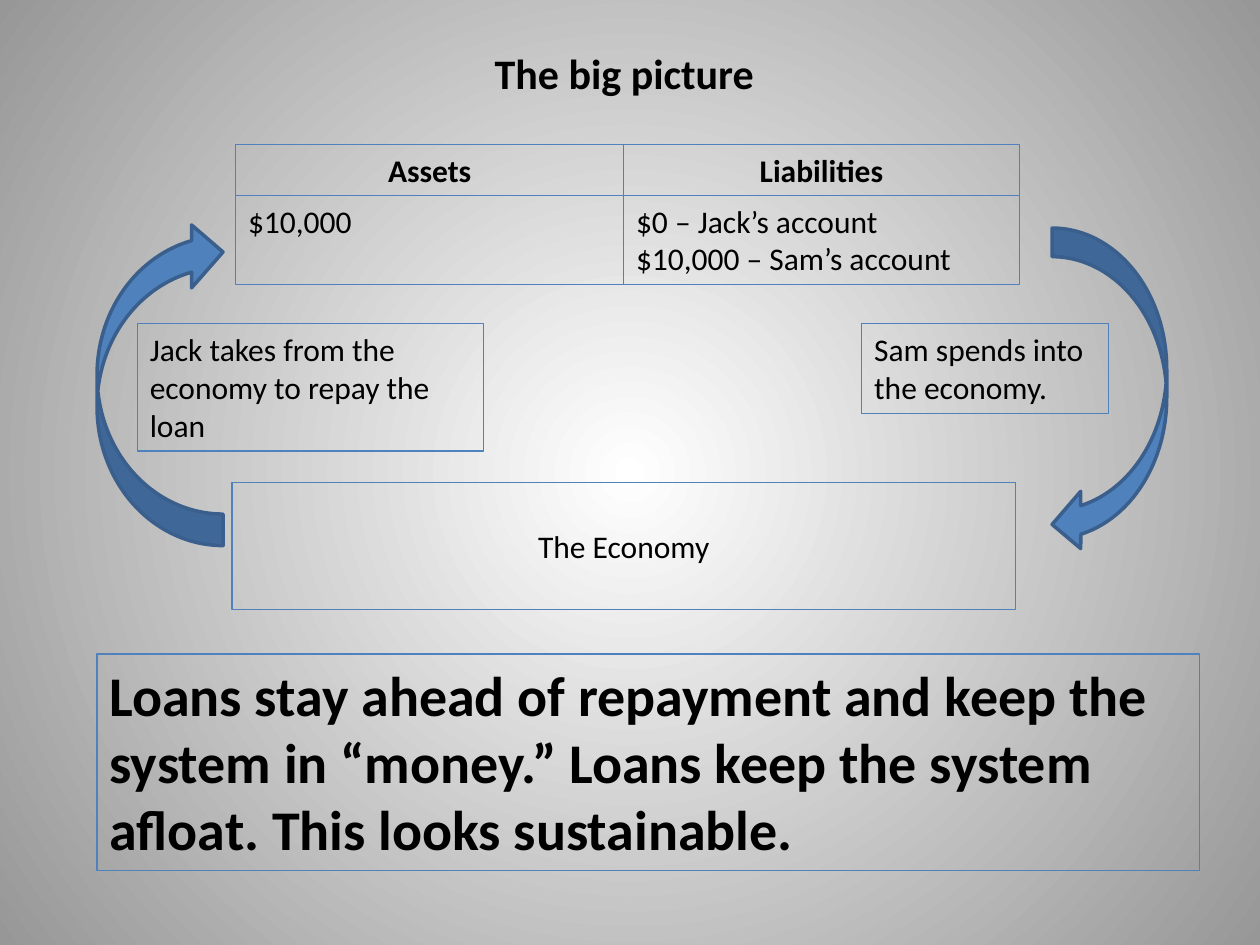
from lxml import etree
from pptx import Presentation
from pptx.dml.color import RGBColor
from pptx.enum.shapes import MSO_SHAPE
from pptx.enum.text import MSO_ANCHOR, PP_ALIGN
from pptx.oxml.ns import qn
from pptx.util import Inches, Pt

# Content
TITLE = "The big picture"
LEDGER = [
    ["Assets", "Liabilities"],
    ["$10,000", "$0 – Jack’s account\n$10,000 – Sam’s account"],
]
ECONOMY = "The Economy"
SPENDING = "Sam spends into the economy."
REPAYMENT = "Jack takes from the economy to repay the loan"
CONCLUSION = ("Loans stay ahead of repayment and keep the system in “money.” "
              "Loans keep the system afloat. This looks sustainable.")

# Layout in inches
LEDGER_LEFT, LEDGER_TOP = 1.87, 1.15
COLUMN_WIDTHS = [3.08, 3.14]
ROW_HEIGHTS = [0.4, 0.71]
MARGIN = 0.77
NOTE_TOP = 2.57
ARROW_HEIGHT = 2.58

BLUE, DARK_BLUE, BLACK = "4F81BD", "3A5F8C", "000000"
GRADIENT = ["FFFFFF", "979797"]


def color(value):
    return RGBColor.from_string(value)


def place(shape, left, top, width, height):
    shape.left, shape.top = Inches(left), Inches(top)
    shape.width, shape.height = Inches(width), Inches(height)


def write(shape, text, size=18, bold=False, align=PP_ALIGN.LEFT, anchor=MSO_ANCHOR.TOP):
    frame = shape.text_frame
    frame.word_wrap = True
    frame.vertical_anchor = anchor
    frame.text = text
    for paragraph in frame.paragraphs:
        paragraph.alignment = align
        font = paragraph.font
        font.name, font.size, font.bold = "Calibri", Pt(size), bold
        font.color.rgb = color(BLACK)


def add_box(slide, text, left, top, width, height, **text_format):
    box = slide.shapes.add_shape(MSO_SHAPE.RECTANGLE, 0, 0, 0, 0)
    place(box, left, top, width, height)
    box.shadow.inherit = False
    box.fill.background()
    box.line.color.rgb = color(BLUE)
    box.line.width = Pt(0.75)
    write(box, text, **text_format)


def add_flow(slide, left, top, width, rotation=0):
    arrow = slide.shapes.add_shape(MSO_SHAPE.CURVED_LEFT_ARROW, 0, 0, 0, 0)
    place(arrow, left, top, width, ARROW_HEIGHT)
    arrow.rotation = rotation
    arrow.shadow.inherit = False
    arrow.fill.solid()
    arrow.fill.fore_color.rgb = color(BLUE)
    arrow.line.color.rgb = color(DARK_BLUE)
    arrow.line.width = Pt(2)


def paint_background(slide):
    fill = slide.background.fill
    fill.gradient()
    for stop, shade in zip(fill.gradient_stops, GRADIENT):
        stop.color.rgb = color(shade)
    # Turn the linear gradient into a circle around the slide's centre
    gradient = slide.element.find(".//" + qn("a:gradFill"))
    gradient.remove(gradient.find(qn("a:lin")))
    circle = etree.SubElement(gradient, qn("a:path"), {"path": "circle"})
    etree.SubElement(circle, qn("a:fillToRect"), dict.fromkeys("ltrb", "50000"))


def main():
    deck = Presentation()
    deck.slide_width, deck.slide_height = Inches(10), Inches(7.5)
    slide = deck.slides.add_slide(deck.slide_layouts[5])
    paint_background(slide)

    # Title
    title = slide.shapes.title
    place(title, 2.58, 0.33, 4.75, 0.5)
    write(title, TITLE, size=24, bold=True, align=PP_ALIGN.CENTER)

    # Ledger grid
    for row, (cells, height) in enumerate(zip(LEDGER, ROW_HEIGHTS)):
        top = LEDGER_TOP + sum(ROW_HEIGHTS[:row])
        header = row == 0
        for column, (text, width) in enumerate(zip(cells, COLUMN_WIDTHS)):
            add_box(slide, text, LEDGER_LEFT + sum(COLUMN_WIDTHS[:column]), top, width, height,
                    bold=header, align=PP_ALIGN.CENTER if header else PP_ALIGN.LEFT)

    # Economy, and the flows in and out of it
    add_box(slide, ECONOMY, 1.84, 3.83, sum(COLUMN_WIDTHS), 1.01,
            align=PP_ALIGN.CENTER, anchor=MSO_ANCHOR.MIDDLE)
    add_flow(slide, 8.35, 1.81, 0.91)
    add_box(slide, SPENDING, 6.84, NOTE_TOP, 1.96, 0.71)
    add_flow(slide, MARGIN, 1.75, 1, rotation=180)
    add_box(slide, REPAYMENT, 1.09, NOTE_TOP, 2.75, 1.01)

    # Conclusion
    add_box(slide, CONCLUSION, MARGIN, 5.19, 8.75, 1.72, size=32, bold=True)

    deck.save("out.pptx")


if __name__ == "__main__":
    main()
